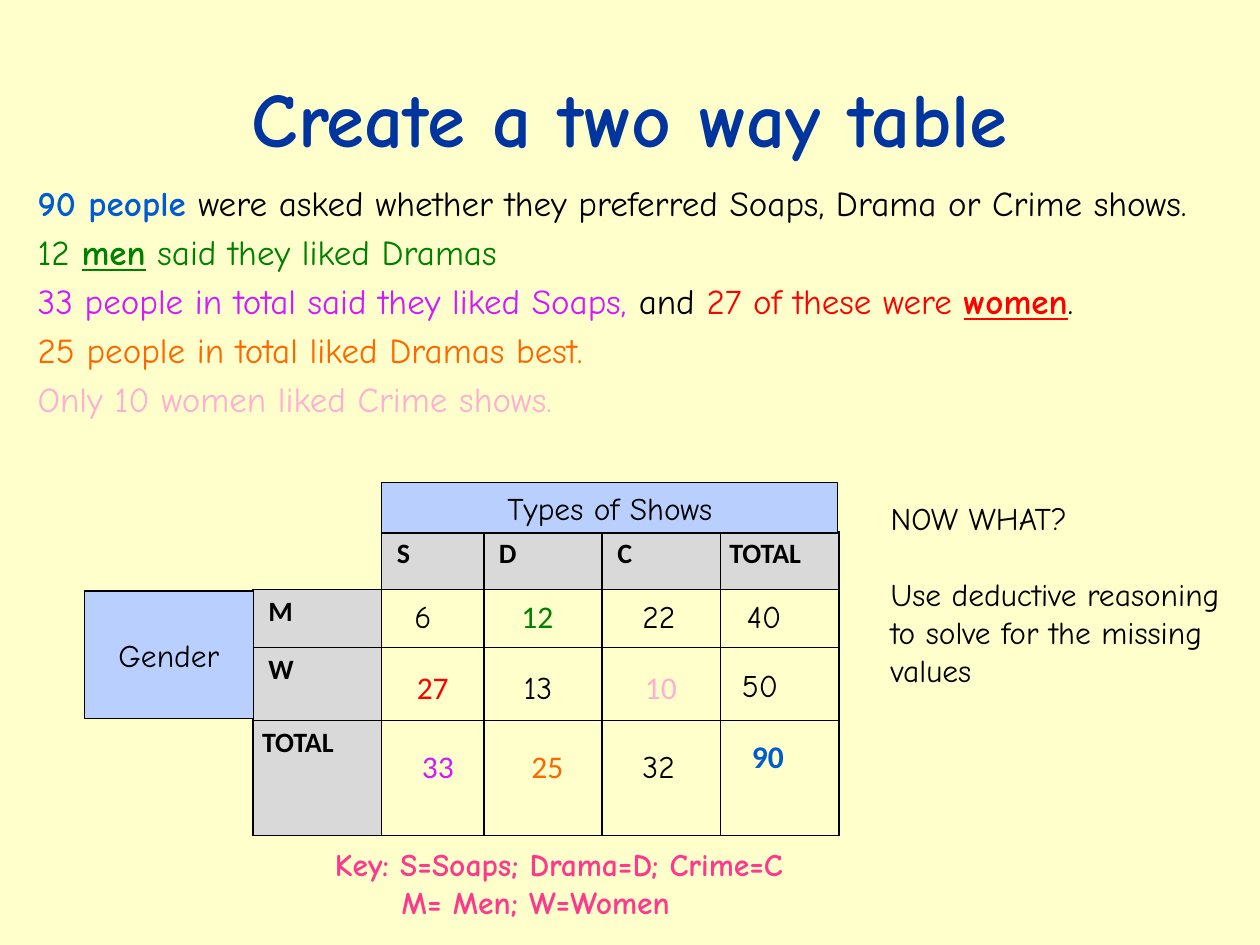
"""Build a slide that works through a two-way table of viewing preferences."""
from lxml.etree import SubElement
from pptx import Presentation
from pptx.dml.color import RGBColor
from pptx.enum.shapes import MSO_SHAPE
from pptx.enum.text import MSO_ANCHOR as Anchor, PP_ALIGN as Align
from pptx.oxml.ns import qn
from pptx.util import Inches, Pt

CREAM = RGBColor(0xFF, 0xFF, 0xCC)
NAVY = RGBColor(0x00, 0x34, 0x9E)
BLUE = RGBColor(0x00, 0x5B, 0xD3)
BLACK = RGBColor(0x00, 0x00, 0x00)
GREEN = RGBColor(0x00, 0x80, 0x00)
PURPLE = RGBColor(0xD5, 0x19, 0xFF)
RED = RGBColor(0xFF, 0x00, 0x00)
ORANGE = RGBColor(0xFF, 0x66, 0x00)
PINK = RGBColor(0xFF, 0xAF, 0xD1)
MAGENTA = RGBColor(0xFF, 0x38, 0x8C)
GREY = RGBColor(0xD9, 0xD9, 0xD9)
PALE_BLUE = RGBColor(0xB9, 0xD0, 0xFF)
HAND, PLAIN = "Comic Neue", "Calibri"

CLUES = [
    [("90 people ", {"color": BLUE, "bold": True}),
     ("were asked whether they preferred Soaps, Drama or Crime shows.", {})],
    [("12 ", {"color": GREEN}),
     ("men", {"color": GREEN, "bold": True, "underline": True}),
     (" said they liked Dramas", {"color": GREEN})],
    [("33 people in total said they liked Soaps,", {"color": PURPLE}),
     (" and ", {}),
     ("27 of these were ", {"color": RED}),
     ("women", {"color": RED, "bold": True, "underline": True}),
     (".", {})],
    [("25 people in total liked Dramas best.", {"color": ORANGE})],
    [("Only 10 women liked Crime shows.", {"color": PINK})],
]
SHOWS = ["S", "D", "C", "TOTAL"]
GENDERS = ["M", "W", "TOTAL"]
COLUMN_WIDTHS = [1.02, 0.81, 0.94, 0.94, 0.94]
ROW_HEIGHTS = [0.46, 0.46, 0.58, 0.91]
GIVEN = [
    ("12", 4.04, 4.69, GREEN, False),
    ("27", 3.21, 5.25, RED, False),
    ("10", 5.02, 5.25, PINK, False),
    ("33", 3.25, 5.88, PURPLE, False),
    ("25", 4.12, 5.88, ORANGE, False),
    ("90", 5.87, 5.8, BLUE, True),
]
DEDUCED = [
    ("6", 3.19, 4.69), ("22", 5, 4.69), ("40", 5.83, 4.69),
    ("13", 4.06, 5.25), ("50", 5.79, 5.24), ("32", 5, 5.88),
]


def add_text(paragraph, text, size=18, font=HAND, color=BLACK, bold=False, underline=False):
    run = paragraph.add_run()
    run.text = text
    run.font.size = Pt(size)
    run.font.name = font
    run.font.color.rgb = color
    run.font.bold = bold
    run.font.underline = underline


class Board:
    def __init__(self, slide, font=HAND, label_font=PLAIN, ink=BLACK):
        self.slide = slide
        self.font = font
        self.label_font = label_font
        self.ink = ink
        slide.background.fill.solid()
        slide.background.fill.fore_color.rgb = CREAM

    def text(self, left, top, width, height, lines, wrap=True, anchor=Anchor.TOP,
             align=Align.LEFT, before=0, **style):
        place = [Inches(n) for n in (left, top, width, height)]
        frame = self.slide.shapes.add_textbox(*place).text_frame
        frame.word_wrap = wrap
        frame.vertical_anchor = anchor
        for index, line in enumerate(lines):
            paragraph = frame.add_paragraph() if index else frame.paragraphs[0]
            paragraph.alignment = align
            paragraph.space_before = Pt(before)
            runs = [(line, {})] if isinstance(line, str) else line
            for words, extra in runs:
                add_text(paragraph, words, **{"font": self.font, "color": self.ink,
                                              **style, **extra})
        return frame

    def heading_box(self, left, top, width, height, words):
        place = [Inches(n) for n in (left, top, width, height)]
        box = self.slide.shapes.add_shape(MSO_SHAPE.RECTANGLE, *place)
        box.shadow.inherit = False
        box.fill.solid()
        box.fill.fore_color.rgb = PALE_BLUE
        box.line.color.rgb = self.ink
        box.line.width = Pt(0.75)
        paragraph = box.text_frame.paragraphs[0]
        paragraph.alignment = Align.CENTER
        add_text(paragraph, words, font=self.font, color=self.ink)

    def border(self, cell, sides):
        properties = cell._tc.get_or_add_tcPr()
        for side in "LRTB":
            line = SubElement(properties, qn(f"a:ln{side}"), w=str(Pt(1)))
            if side in sides:
                fill = SubElement(line, qn("a:solidFill"))
                SubElement(fill, qn("a:srgbClr"), val=str(self.ink))
            else:
                SubElement(line, qn("a:noFill"))

    def label(self, cell, words):
        cell.fill.solid()
        cell.fill.fore_color.rgb = GREY
        cell.margin_left = Inches(0.12 if len(words) == 1 else 0.07)
        paragraph = cell.text_frame.paragraphs[0]
        paragraph.line_spacing = 1.15
        paragraph.space_after = Pt(10)
        add_text(paragraph, words, size=16, font=self.label_font, color=self.ink, bold=True)

    def two_way_table(self, left, top, widths, heights, across, down):
        place = [Inches(n) for n in (left, top, sum(widths), sum(heights))]
        table = self.slide.shapes.add_table(len(heights), len(widths), *place).table
        table.first_row = table.horz_banding = False
        for column, width in zip(table.columns, widths):
            column.width = Inches(width)
        for row, height in zip(table.rows, heights):
            row.height = Inches(height)
        for r in range(len(heights)):
            for c in range(len(widths)):
                cell = table.cell(r, c)
                cell.margin_left = cell.margin_right = Inches(0.07)
                cell.margin_top = cell.margin_bottom = 0
                self.border(cell, "LRTB" if r or c else "RB")
                if r and c or not (r or c):
                    cell.fill.background()
                else:
                    self.label(cell, down[r - 1] if r else across[c - 1])


def main():
    deck = Presentation()
    deck.slide_width, deck.slide_height = Inches(10), Inches(7.5)
    board = Board(deck.slides.add_slide(deck.slide_layouts[6]))

    board.text(0.5, 0.3, 9, 1.25, ["Create a two way table"], anchor=Anchor.MIDDLE,
               align=Align.CENTER, size=44, color=NAVY, bold=True)
    board.text(0.2, 1.39, 9.61, 5.83, CLUES, before=4, size=20)

    board.two_way_table(2.01, 4.22, COLUMN_WIDTHS, ROW_HEIGHTS, SHOWS, GENDERS)
    board.heading_box(3.03, 3.83, 3.62, 0.4, "Types of Shows")
    board.heading_box(0.67, 4.69, 1.34, 1.01, "Gender")
    for value, left, top, color, bold in GIVEN:
        board.text(left, top, 0.46, 0.4, [value], wrap=False, font=PLAIN,
                   color=color, bold=bold)
    for value, left, top in DEDUCED:
        board.text(left, top, 0.5, 0.4, [value], wrap=False)

    key = board.text(2.56, 6.66, 4.44, 0.71,
                     ["Key: S=Soaps; Drama=D; Crime=C", "M= Men; W=Women"],
                     color=MAGENTA, bold=True)
    key.paragraphs[1]._p.get_or_add_pPr().set("marL", str(Inches(0.53)))
    advice = board.text(6.97, 3.91, 2.83, 1.62, [
        "NOW WHAT?", "Use deductive reasoning to solve for the missing values"])
    advice.paragraphs[1].space_before = Pt(22)

    deck.save("out.pptx")


if __name__ == "__main__":
    main()
